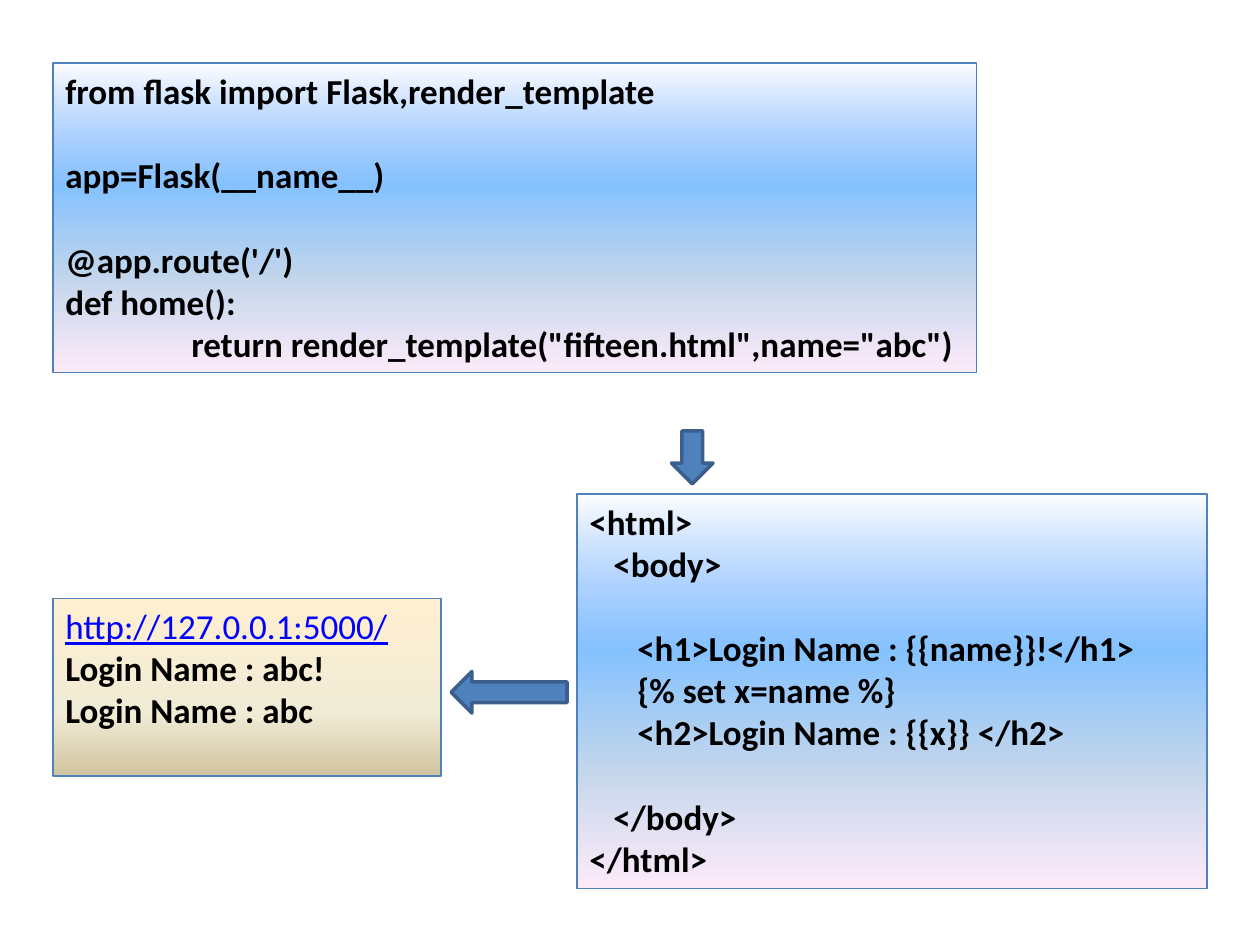
from dataclasses import dataclass

from lxml import etree
from pptx import Presentation
from pptx.dml.color import RGBColor
from pptx.enum.shapes import MSO_SHAPE
from pptx.enum.text import MSO_ANCHOR, PP_ALIGN
from pptx.oxml.ns import qn
from pptx.util import Inches, Pt

RECT = MSO_SHAPE.RECTANGLE
LEFT_ARROW = MSO_SHAPE.LEFT_ARROW
DOWN_ARROW = MSO_SHAPE.DOWN_ARROW
TOP = MSO_ANCHOR.TOP
LEFT = PP_ALIGN.LEFT


@dataclass(frozen=True)
class Theme:
    font: str = "Calibri"
    size: float = 20
    gap: float = 24.4
    text: str = "000000"
    link: str = "0000FF"
    blue: str = "4F81BD"
    edge: str = "3A5F8C"
    thin: float = 0.75
    thick: float = 2
    sky: tuple = ((0, "5E9EFF", 0), (40, "85C2FF", 100),
                  (70, "C4D6EB", 100), (100, "FFEBFA", 100))
    sand: tuple = ((0, "FFEFD1", 100), (65, "F0EBD5", 100),
                   (100, "D1C39F", 100))


@dataclass(frozen=True)
class Line:
    text: str
    indent: float = 0
    gap: bool = False
    link: bool = False


class Painter:
    def __init__(self, slide, theme):
        self.slide = slide
        self.theme = theme

    def shape(self, kind, area, edge, width):
        shape = self.slide.shapes.add_shape(kind, *map(Inches, area))
        shape.shadow.inherit = False
        shape.line.color.rgb = RGBColor.from_string(edge)
        shape.line.width = Pt(width)
        return shape

    def blend(self, shape, stops):
        shape.fill.gradient()
        shape.fill.gradient_angle = 270
        grad = shape.element.spPr.find(qn("a:gradFill"))
        items = grad.find(qn("a:gsLst"))
        for old in list(items):
            items.remove(old)
        for place, color, alpha in stops:
            stop = etree.SubElement(items, qn("a:gs"), pos=str(place * 1000))
            tint = etree.SubElement(stop, qn("a:srgbClr"), val=color)
            if alpha < 100:
                etree.SubElement(tint, qn("a:alpha"), val=str(alpha * 1000))

    def panel(self, area, stops, lines):
        theme = self.theme
        shape = self.shape(RECT, area, theme.blue, theme.thin)
        self.blend(shape, stops)
        frame = shape.text_frame
        frame.word_wrap = True
        frame.vertical_anchor = TOP
        frame.text = "\n".join(line.text for line in lines)
        for para, line in zip(frame.paragraphs, lines):
            para.alignment = LEFT
            para.space_before = Pt(theme.gap if line.gap else 0)
            if line.indent:
                props = para.runs[0].font
                para._p.get_or_add_pPr().set("marL", str(Inches(line.indent)))
            props = para.runs[0].font
            props.name = theme.font
            props.size = Pt(theme.size)
            props.bold = not line.link
            props.underline = line.link
            color = theme.link if line.link else theme.text
            props.color.rgb = RGBColor.from_string(color)

    def arrow(self, kind, area):
        theme = self.theme
        shape = self.shape(kind, area, theme.edge, theme.thick)
        shape.fill.solid()
        shape.fill.fore_color.rgb = RGBColor.from_string(theme.blue)


def main():
    deck = Presentation()
    deck.slide_width = Inches(10)
    deck.slide_height = Inches(7.5)
    theme = Theme()
    paint = Painter(deck.slides.add_slide(deck.slide_layouts[6]), theme)

    paint.panel((0.42, 0.5, 7.33, 2.46), theme.sky, (
        Line("from flask import Flask,render_template"),
        Line("app=Flask(__name__)", gap=True),
        Line("@app.route('/')", gap=True),
        Line("def home():"),
        Line('return render_template("fifteen.html",name="abc")', indent=1),
    ))
    paint.panel((4.58, 3.92, 5, 3.13), theme.sky, (
        Line("<html>"),
        Line("<body>", indent=0.19),
        Line("<h1>Login Name : {{name}}!</h1>", indent=0.38, gap=True),
        Line("{% set x=name %}", indent=0.38),
        Line("<h2>Login Name : {{x}} </h2>", indent=0.38),
        Line("</body>", indent=0.19, gap=True),
        Line("</html>"),
    ))
    paint.panel((0.42, 4.75, 3.08, 1.41), theme.sand, (
        Line("http://127.0.0.1:5000/", link=True),
        Line("Login Name : abc!"),
        Line("Login Name : abc"),
    ))
    paint.arrow(LEFT_ARROW, (3.58, 5.33, 0.92, 0.33))
    paint.arrow(DOWN_ARROW, (5.33, 3.42, 0.33, 0.42))

    deck.save("out.pptx")


if __name__ == "__main__":
    main()
